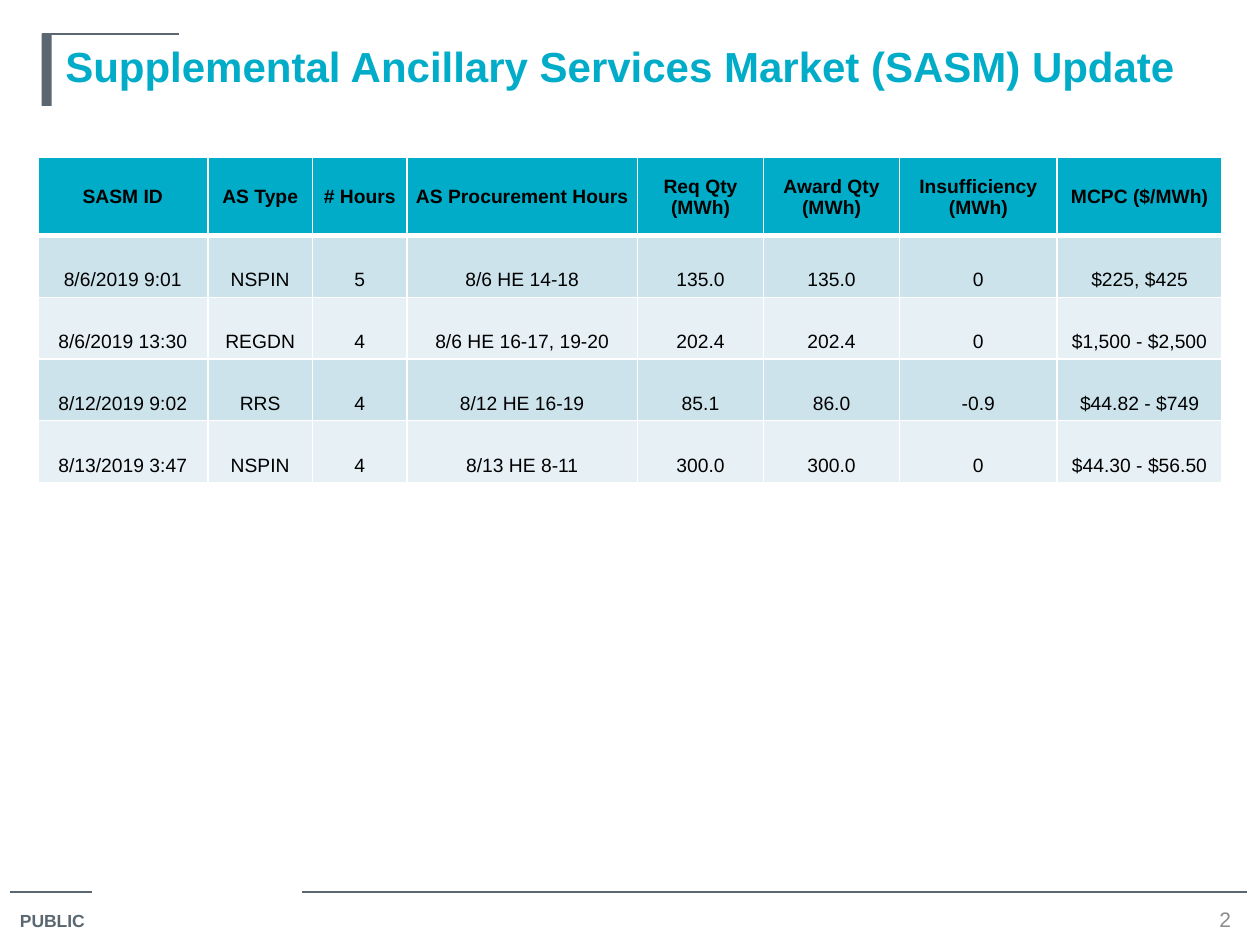
from copy import deepcopy

from lxml.etree import SubElement
from pptx import Presentation
from pptx.dml.color import RGBColor
from pptx.enum.shapes import MSO_CONNECTOR, MSO_SHAPE
from pptx.enum.text import MSO_ANCHOR, PP_ALIGN
from pptx.oxml import parse_xml
from pptx.oxml.ns import nsdecls, qn
from pptx.util import Inches, Pt

COLORS = {
    "teal": "00ACC8", "slate": "5B6770", "gray": "8C8C8C", "black": "000000",
    "white": "FFFFFF", "dark_band": "CCE3EB", "light_band": "E7F1F5",
}
FONT = "Arial"

# start x, end x, y
RULES = [(0.08, 0.73, 7.08), (2.4, 9.9, 7.08), (0.33, 1.42, 0.27)]
TITLE_BAR = (0.33, 0.27, 0.08, 0.57)

# text, box, format, alignment, anchor
TEXTS = [
    ("PUBLIC", (0.06, 7.17, 0.77, 0.28),
     {"size": 10, "bold": True, "color": "slate"}, PP_ALIGN.LEFT, MSO_ANCHOR.TOP),
    ("Supplemental Ancillary Services Market (SASM) Update", (0.42, 0.27, 9.25, 1.25),
     {"size": 24, "bold": True, "color": "teal"}, PP_ALIGN.LEFT, MSO_ANCHOR.TOP),
    ("2", (9.58, 7.18, 0.25, 0.23),
     {"size": 12, "bold": False, "color": "gray"}, PP_ALIGN.CENTER, MSO_ANCHOR.MIDDLE),
]

TABLE_BOX = (0.3, 1.25, 9.4, 2.58)
COLUMN_WIDTHS = [1.35, 0.83, 0.75, 1.83, 1, 1.08, 1.25, 1.31]
HEADER_HEIGHT, ROW_HEIGHT = 0.62, 0.49
TABLE_ROWS = [
    ("SASM ID", "AS Type", "# Hours", "AS Procurement Hours", "Req Qty\n(MWh)",
     "Award Qty\n(MWh)", "Insufficiency\n(MWh)", "MCPC ($/MWh)"),
    ("8/6/2019 9:01", "NSPIN", "5", "8/6 HE 14-18", "135.0", "135.0", "0", "$225, $425"),
    ("8/6/2019 13:30", "REGDN", "4", "8/6 HE 16-17, 19-20", "202.4", "202.4", "0",
     "$1,500 - $2,500"),
    ("8/12/2019 9:02", "RRS", "4", "8/12 HE 16-19", "85.1", "86.0", "-0.9", "$44.82 - $749"),
    ("8/13/2019 3:47", "NSPIN", "4", "8/13 HE 8-11", "300.0", "300.0", "0",
     "$44.30 - $56.50"),
]
HEADER_MARGINS = {"margin_left": 0.01, "margin_right": 0.01,
                  "margin_top": 0.01, "margin_bottom": 0}


def rgb(name):
    return RGBColor.from_string(COLORS[name])


def inches(values):
    return [Inches(value) for value in values]


def write(paragraph, text, style, alignment):
    """Fill a paragraph, giving its line breaks the same format as its runs."""
    paragraph.text = text
    paragraph.alignment = alignment
    values = {"name": FONT, "size": Pt(style["size"]), "bold": style["bold"]}
    for run in paragraph.runs:
        for attribute, value in values.items():
            setattr(run.font, attribute, value)
        run.font.color.rgb = rgb(style["color"])
    for line_break in paragraph._p.findall(qn("a:br")):
        line_break.append(deepcopy(paragraph.runs[0]._r.rPr))


def add_rule(slide, start, end, y):
    rule = slide.shapes.add_connector(
        MSO_CONNECTOR.STRAIGHT, *inches((start, y, end, y)))
    rule.line.color.rgb = rgb("slate")
    rule.line.width = Pt(0.75)
    SubElement(rule._element.spPr, qn("a:effectLst"))


def add_title_bar(slide):
    bar = slide.shapes.add_shape(MSO_SHAPE.RECTANGLE, *inches(TITLE_BAR))
    bar.shadow.inherit = False
    bar.fill.solid()
    bar.fill.fore_color.rgb = rgb("slate")
    bar.line.fill.background()


def add_text(slide, text, box, style, alignment, anchor):
    frame = slide.shapes.add_textbox(*inches(box)).text_frame
    frame.word_wrap = len(text) > 1
    frame.vertical_anchor = anchor
    write(frame.paragraphs[0], text, style, alignment)


def set_borders(cell, widths):
    """Draw white borders; they must come before the fill in the cell properties."""
    properties = cell._tc.get_or_add_tcPr()
    for index, (side, width) in enumerate(widths.items()):
        properties.insert(index, parse_xml(
            f'<a:ln{side} {nsdecls("a")} w="{Pt(width)}"><a:solidFill>'
            f'<a:srgbClr val="{COLORS["white"]}"/></a:solidFill></a:ln{side}>'))


def format_cell(cell, text, row_index):
    is_header = row_index == 0
    band = "dark_band" if row_index % 2 else "light_band"
    cell.fill.solid()
    cell.fill.fore_color.rgb = rgb("teal" if is_header else band)
    cell.vertical_anchor = MSO_ANCHOR.MIDDLE if is_header else MSO_ANCHOR.BOTTOM
    if is_header:
        for attribute, value in HEADER_MARGINS.items():
            setattr(cell, attribute, Inches(value))
    set_borders(cell, {"L": 1, "R": 1, "T": 3 if row_index == 1 else 1,
                       "B": 3 if is_header else 1})
    style = {"size": 11, "bold": is_header, "color": "black"}
    write(cell.text_frame.paragraphs[0], text, style, PP_ALIGN.CENTER)


def add_market_table(slide):
    table = slide.shapes.add_table(
        len(TABLE_ROWS), len(COLUMN_WIDTHS), *inches(TABLE_BOX)).table
    for column, width in zip(table.columns, COLUMN_WIDTHS):
        column.width = Inches(width)
    for row_index, texts in enumerate(TABLE_ROWS):
        row = table.rows[row_index]
        row.height = Inches(ROW_HEIGHT if row_index else HEADER_HEIGHT)
        for cell, text in zip(row.cells, texts):
            format_cell(cell, text, row_index)


def main():
    presentation = Presentation()
    presentation.slide_width, presentation.slide_height = inches((10, 7.5))
    slide = presentation.slides.add_slide(presentation.slide_layouts[6])
    for rule in RULES:
        add_rule(slide, *rule)
    add_title_bar(slide)
    for text in TEXTS:
        add_text(slide, *text)
    add_market_table(slide)
    presentation.save("out.pptx")


if __name__ == "__main__":
    main()
